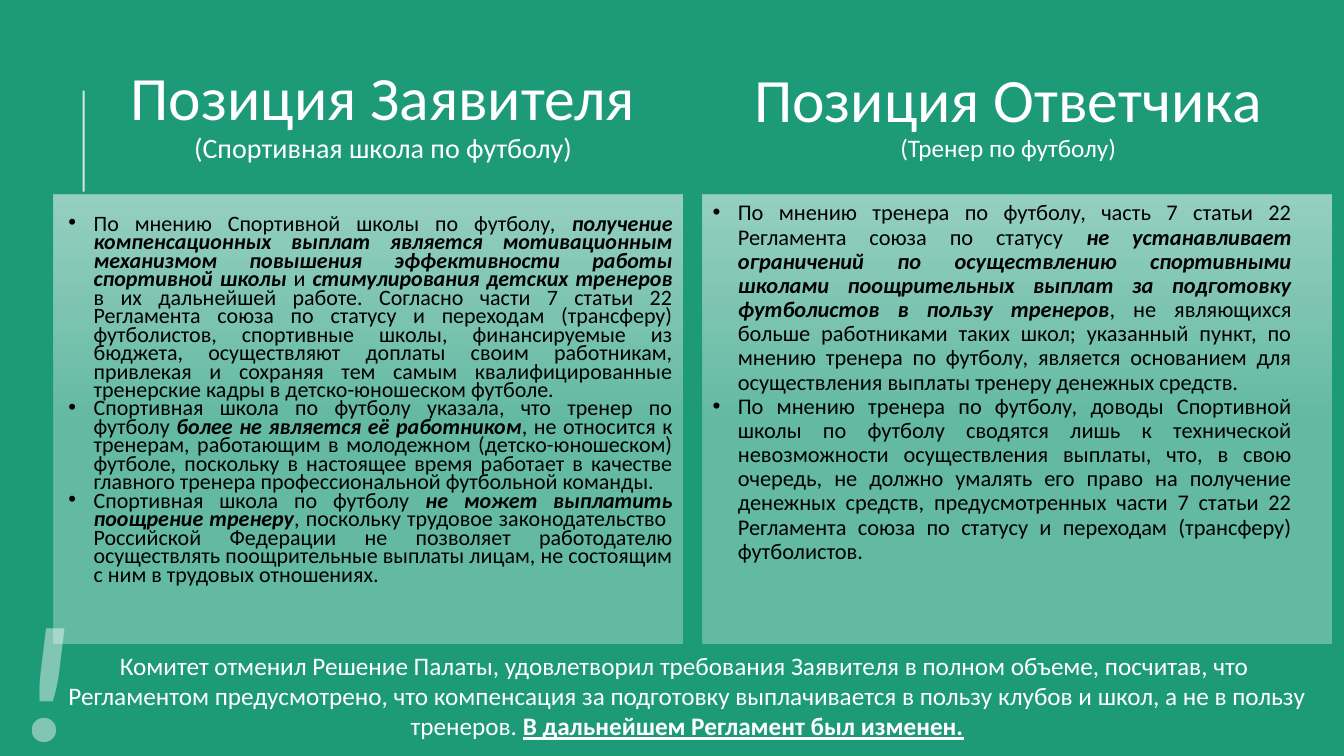
from lxml import etree
from pptx import Presentation
from pptx.dml.color import RGBColor
from pptx.enum.shapes import MSO_CONNECTOR, MSO_SHAPE
from pptx.enum.text import MSO_ANCHOR, PP_ALIGN
from pptx.oxml.ns import qn
from pptx.util import Inches, Pt

LEFT, CENTER, JUSTIFY = PP_ALIGN.LEFT, PP_ALIGN.CENTER, PP_ALIGN.JUSTIFY
TOP, MIDDLE = MSO_ANCHOR.TOP, MSO_ANCHOR.MIDDLE
RECTANGLE, STRAIGHT = MSO_SHAPE.RECTANGLE, MSO_CONNECTOR.STRAIGHT
GREEN, WHITE, BLACK = "1D9A78", "FFFFFF", "000000"
PLAIN, STRONG, KEY = "", "bi", "bu"

APPLICANT_POINTS = [
    [("По мнению Спортивной школы по футболу, ", PLAIN),
     ("получение компенсационных выплат является мотивационным механизмом повышения "
      "эффективности работы спортивной школы", STRONG),
     (" и ", PLAIN),
     ("стимулирования детских тренеров ", STRONG),
     ("в их дальнейшей работе. Согласно части 7 статьи 22 Регламента союза по статусу и "
      "переходам (трансферу) футболистов, спортивные школы, финансируемые из бюджета, "
      "осуществляют доплаты своим работникам, привлекая и сохраняя тем самым "
      "квалифицированные тренерские кадры в детско-юношеском футболе.", PLAIN)],
    [("Спортивная школа по футболу указала, что тренер по футболу ", PLAIN),
     ("более не является её работником", STRONG),
     (", не относится к тренерам, работающим в молодежном (детско-юношеском) футболе, "
      "поскольку в настоящее время работает в качестве главного тренера "
      "профессиональной футбольной команды.", PLAIN)],
    [("Спортивная школа по футболу ", PLAIN),
     ("не может выплатить поощрение тренеру", STRONG),
     (", поскольку трудовое законодательство \nРоссийской Федерации не позволяет "
      "работодателю осуществлять поощрительные выплаты лицам, не состоящим с ним в "
      "трудовых отношениях.", PLAIN)],
]
RESPONDENT_POINTS = [
    [("По мнению тренера по футболу, часть 7 статьи 22 Регламента союза по статусу ", PLAIN),
     ("не устанавливает ограничений по осуществлению спортивными школами поощрительных "
      "выплат за подготовку футболистов в пользу тренеров", STRONG),
     (", не являющихся больше работниками таких школ; указанный пункт, по мнению тренера "
      "по футболу, является основанием для осуществления выплаты тренеру денежных "
      "средств.", PLAIN)],
    [("По мнению тренера по футболу, доводы Спортивной школы по футболу сводятся лишь к "
      "технической невозможности осуществления выплаты, что, в свою очередь, не должно "
      "умалять его право на получение денежных средств, предусмотренных части 7 статьи 22 "
      "Регламента союза по статусу и переходам (трансферу) футболистов.", PLAIN)],
]
VERDICT = [
    ("Комитет отменил Решение Палаты, удовлетворил требования Заявителя в полном объеме, "
     "посчитав, что \nРегламентом предусмотрено, что компенсация за подготовку выплачивается "
     "в пользу клубов и школ, а не в пользу тренеров. ", PLAIN),
    ("В дальнейшем Регламент был изменен.", KEY),
]


def color(value):
    return RGBColor.from_string(value)


def set_alpha(element, percent):
    """Make every solid colour inside the element translucent."""
    for srgb in element.iter(qn("a:srgbClr")):
        etree.SubElement(srgb, qn("a:alpha")).set("val", str(percent * 1000))


class SlideBuilder:
    font = "Calibri"

    def __init__(self, slide):
        self.slide = slide

    def background(self, value):
        fill = self.slide.background.fill
        fill.solid()
        fill.fore_color.rgb = color(value)

    def panel(self, left, top, width, height):
        """Draw a white translucent panel that fades downwards."""
        shape = self.slide.shapes.add_shape(
            RECTANGLE, Inches(left), Inches(top), Inches(width), Inches(height))
        shape.shadow.inherit = False
        shape.line.fill.background()
        shape.fill.gradient()
        gradient = shape._element.spPr.find(qn("a:gradFill"))
        for child in list(gradient):
            gradient.remove(child)
        stops = etree.SubElement(gradient, qn("a:gsLst"))
        for position, opacity in ((0, 53), (50, 31), (100, 30)):
            stop = etree.SubElement(stops, qn("a:gs"), pos=str(position * 1000))
            etree.SubElement(stop, qn("a:srgbClr"), val=WHITE)
            set_alpha(stop, opacity)
        etree.SubElement(gradient, qn("a:lin"), ang="5400000", scaled="0")

    def rule(self, x, start, end):
        line = self.slide.shapes.add_connector(
            STRAIGHT, Inches(x), Inches(start), Inches(x), Inches(end))
        line.line.width = Pt(1.5)
        line.line.color.rgb = color(WHITE)
        properties = line._element.spPr
        set_alpha(properties, 80)
        etree.SubElement(properties, qn("a:effectLst"))

    def text_box(self, left, top, width, height, anchor=TOP):
        box = self.slide.shapes.add_textbox(
            Inches(left), Inches(top), Inches(width), Inches(height))
        frame = box.text_frame
        frame.word_wrap = True
        frame.vertical_anchor = anchor
        return frame

    def paragraph(self, frame, align, spacing=1.0):
        """Return the unused first paragraph, or a new one."""
        para = frame.paragraphs[0]
        if para.runs:
            para = frame.add_paragraph()
        para.alignment = align
        para.line_spacing = spacing
        return para

    def span(self, para, text, size, value=WHITE, style=PLAIN):
        """Add text, turning each newline into a line break."""
        for index, part in enumerate(text.split("\n")):
            if index:
                para.add_line_break()
            if not part:
                continue
            span = para.add_run()
            span.text = part
            font = span.font
            font.name, font.size = self.font, Pt(size)
            font.color.rgb = color(value)
            font.bold, font.italic = "b" in style, "i" in style
            font.underline = "u" in style
        return span

    def bullets(self, frame, points, size, spacing):
        for point in points:
            para = self.paragraph(frame, JUSTIFY, spacing)
            properties = para._p.get_or_add_pPr()
            properties.set("marL", str(Inches(0.25)))
            properties.set("indent", str(-Inches(0.25)))
            etree.SubElement(properties, qn("a:buFont"), typeface="Arial")
            etree.SubElement(properties, qn("a:buChar"), char="•")
            for text, style in point:
                self.span(para, text, size, BLACK, style)


def main():
    deck = Presentation()
    deck.slide_width, deck.slide_height = Inches(13.33), Inches(7.5)
    page = SlideBuilder(deck.slides.add_slide(deck.slide_layouts[6]))
    page.background(GREEN)

    for left in (0.53, 6.97):
        page.panel(left, 1.93, 6.24, 4.45)
    page.rule(0.83, 1.9, 0.9)

    title = page.text_box(0.83, 0.42, 5.94, 1.46, MIDDLE)
    para = page.paragraph(title, CENTER, 0.9)
    page.span(para, "Позиция Заявителя\n", 44)
    page.span(para, "(Спортивная школа по футболу)", 20)

    title = page.text_box(7.03, 0.42, 5.94, 1.46, MIDDLE)
    for text, size in (("Позиция Ответчика", 44), ("(Тренер по футболу)", 18)):
        page.span(page.paragraph(title, CENTER, 0.9), text, size)

    page.bullets(page.text_box(0.58, 2.1, 6.19, 4.25), APPLICANT_POINTS, 15.7, 0.7)
    page.bullets(page.text_box(6.97, 1.95, 5.94, 4.51), RESPONDENT_POINTS, 16, 0.9)

    para = page.paragraph(page.text_box(0.33, 6.4, 12.97, 1.1), CENTER)
    for text, style in VERDICT:
        page.span(para, text, 18, WHITE, style)

    para = page.paragraph(page.text_box(0.1, 5.67, 2.14, 2.09), LEFT)
    mark = page.span(para, "!", 118, WHITE, STRONG)
    set_alpha(mark._r, 44)

    deck.save("out.pptx")


if __name__ == "__main__":
    main()
